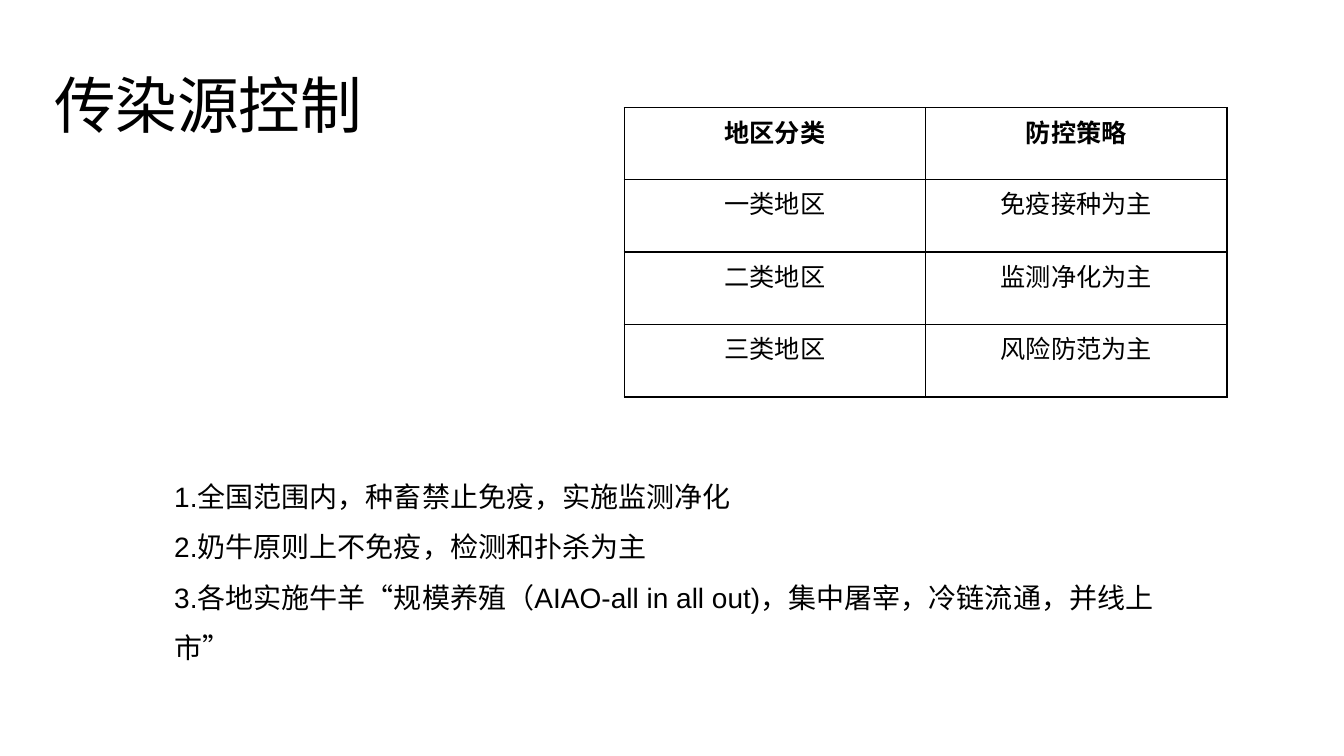
from dataclasses import dataclass

from lxml import etree
from pptx import Presentation
from pptx import util as u
from pptx.dml.color import RGBColor
from pptx.enum import text
from pptx.oxml import ns


@dataclass(frozen=True)
class Theme:
    font: str = "Arial"
    ink: RGBColor = RGBColor(0, 0, 0)
    title: int = 44
    cell: int = 18
    body: int = 20
    rule: float = 1


THEME = Theme()

ZONES = [
    ("地区分类", "防控策略"),
    ("一类地区", "免疫接种为主"),
    ("二类地区", "监测净化为主"),
    ("三类地区", "风险防范为主"),
]
RULES = [
    "1.全国范围内，种畜禁止免疫，实施监测净化",
    "2.奶牛原则上不免疫，检测和扑杀为主",
    "3.各地实施牛羊“规模养殖（AIAO-all in all out)，集中屠宰，冷链流通，并线上市”",
]


def box(*sizes):
    return [u.Inches(size) for size in sizes]


def add_run(para, words, size, bold=False):
    run = para.add_run()
    run.text = words
    font = run.font
    font.name, font.size, font.bold = THEME.font, u.Pt(size), bold
    font.color.rgb = THEME.ink


def add_title(slide, words):
    title = slide.shapes.title
    title.left, title.top, title.width, title.height = box(0.37, 0.6, 3.39, 0.87)
    frame = title.text_frame
    frame.auto_size = text.MSO_AUTO_SIZE.NONE
    frame.vertical_anchor = text.MSO_ANCHOR.MIDDLE
    para = frame.paragraphs[0]
    para.alignment = text.PP_ALIGN.CENTER
    add_run(para, words, THEME.title)


def add_edges(cell):
    # Borders come before the fill in the cell properties
    props = cell._tc.get_or_add_tcPr()
    for spot, side in enumerate(("lnL", "lnR", "lnT", "lnB")):
        line = etree.Element(ns.qn(f"a:{side}"), w=str(u.Pt(THEME.rule)))
        fill = etree.SubElement(line, ns.qn("a:solidFill"))
        etree.SubElement(fill, ns.qn("a:srgbClr"), val=str(THEME.ink))
        props.insert(spot, line)


def add_grid(slide, rows):
    frame = slide.shapes.add_table(len(rows), len(rows[0]), *box(6.19, 1.07, 5.98, 2.87))
    grid = frame.table
    grid.first_row = grid.horz_banding = False
    for i, row in enumerate(rows):
        grid.rows[i].height = u.Inches(0.72 if i else 0.71)
        for j, words in enumerate(row):
            cell = grid.cell(i, j)
            cell.fill.background()
            add_edges(cell)
            para = cell.text_frame.paragraphs[0]
            para.alignment = text.PP_ALIGN.CENTER
            add_run(para, words, THEME.cell, bold=i == 0)


def add_list(slide, lines):
    frame = slide.shapes.add_textbox(*box(1.63, 4.54, 10.34, 1.62)).text_frame
    frame.word_wrap = True
    frame.auto_size = text.MSO_AUTO_SIZE.SHAPE_TO_FIT_TEXT
    for i, words in enumerate(lines):
        para = frame.add_paragraph() if i else frame.paragraphs[0]
        para.line_spacing = 1.5
        add_run(para, words, THEME.body)


def main():
    deck = Presentation()
    deck.slide_width, deck.slide_height = box(13.33, 7.5)
    slide = deck.slides.add_slide(deck.slide_layouts.get_by_name("Title Only"))

    # Heading, strategy by region, then the control rules
    add_title(slide, "传染源控制")
    add_grid(slide, ZONES)
    add_list(slide, RULES)
    deck.save("out.pptx")


if __name__ == "__main__":
    main()
